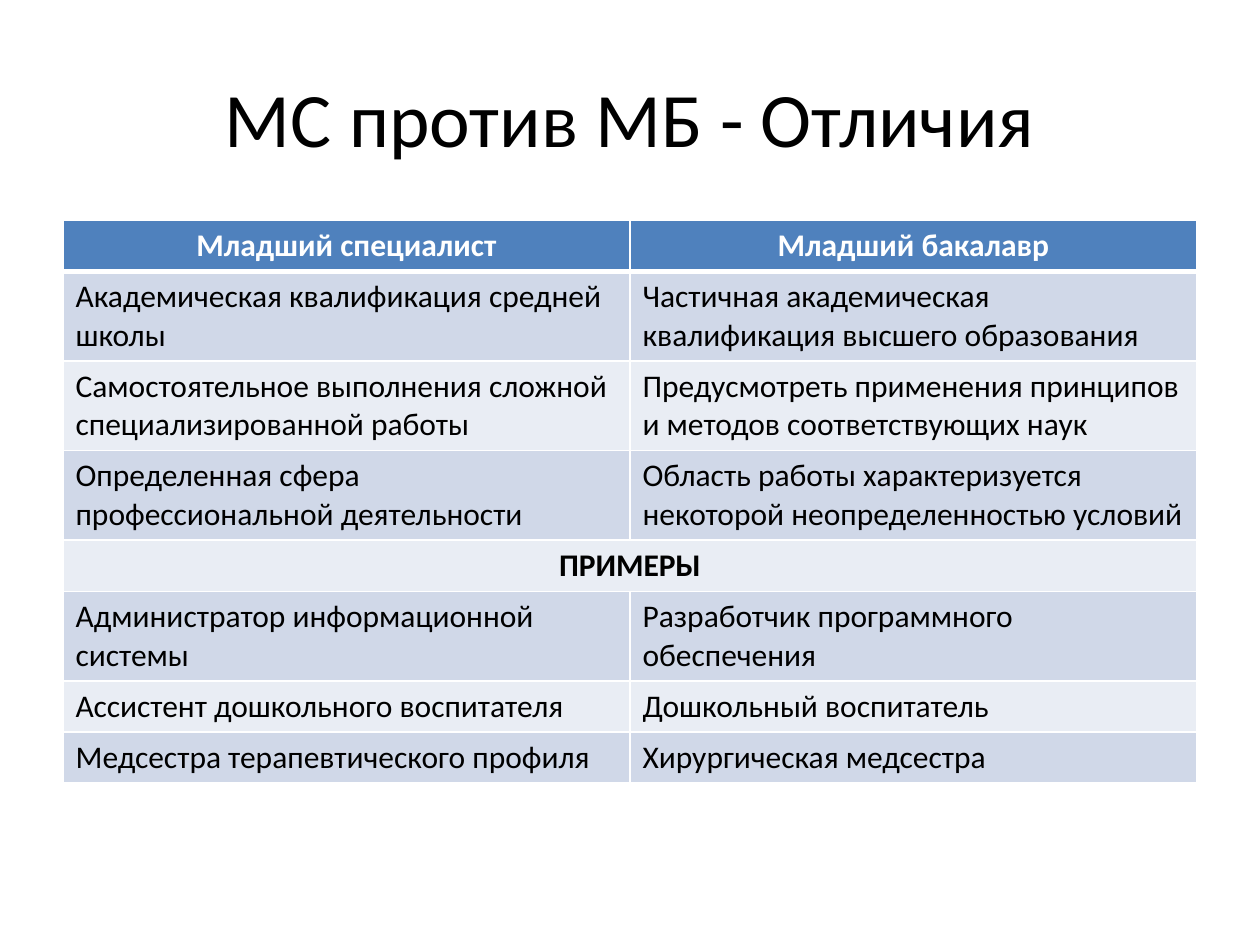
from lxml import etree
from pptx import Presentation
from pptx.dml.color import RGBColor
from pptx.enum.text import MSO_ANCHOR, PP_ALIGN
from pptx.oxml.ns import qn
from pptx.util import Pt

MIDDLE = MSO_ANCHOR.MIDDLE
CENTER, LEFT = PP_ALIGN.CENTER, PP_ALIGN.LEFT
BLACK = RGBColor(0x00, 0x00, 0x00)
WHITE = RGBColor(0xFF, 0xFF, 0xFF)
BLUE = RGBColor(0x4F, 0x81, 0xBD)
DARK = RGBColor(0xD0, 0xD8, 0xE8)
LIGHT = RGBColor(0xE9, 0xED, 0xF4)
FONT = "Calibri"
ROWS = [
    ("Младший специалист", "Младший бакалавр"),
    ("Академическая квалификация средней школы",
     "Частичная академическая квалификация высшего образования"),
    ("Самостоятельное выполнения сложной специализированной работы",
     "Предусмотреть применения принципов и методов соответствующих наук"),
    ("Определенная сфера профессиональной деятельности",
     "Область работы характеризуется некоторой неопределенностью условий"),
    ("ПРИМЕРЫ", ""),
    ("Администратор информационной системы",
     "Разработчик программного обеспечения"),
    ("Ассистент дошкольного воспитателя", "Дошкольный воспитатель"),
    ("Медсестра терапевтического профиля", "Хирургическая медсестра"),
]


def write(para, text, size, color, bold, align):
    para.alignment = align
    run = para.add_run()
    run.text = text
    font = run.font
    font.name, font.size, font.bold = FONT, Pt(size), bold
    font.color.rgb = color


def border(cell, side, width):
    line = etree.SubElement(cell._tc.get_or_add_tcPr(), qn("a:ln" + side), w=str(Pt(width)))
    fill = etree.SubElement(line, qn("a:solidFill"))
    etree.SubElement(fill, qn("a:srgbClr"), val=str(WHITE))


deck = Presentation()
deck.slide_width, deck.slide_height = Pt(720), Pt(540)
slide = deck.slides.add_slide(deck.slide_layouts[5])

title = slide.shapes.title
title.left, title.top, title.width, title.height = Pt(36), Pt(21.6), Pt(648), Pt(90)
title.text_frame.vertical_anchor = MIDDLE
write(title.text_frame.paragraphs[0], "МС против МБ - Отличия", 44, BLACK, False, CENTER)

frame = slide.shapes.add_table(len(ROWS), 2, Pt(36), Pt(126), Pt(648), Pt(29.2 * len(ROWS)))
table = frame.table
for r, row in enumerate(ROWS):
    head = r == 0
    wide = not row[1]
    back = BLUE if head else DARK if r % 2 else LIGHT
    for c, text in enumerate(row):
        cell = table.cell(r, c)
        for side in "LRTB":
            thick = (head and side == "B") or (r == 1 and side == "T")
            border(cell, side, 3 if thick else 1)
        cell.fill.solid()
        cell.fill.fore_color.rgb = back
        if text:
            write(cell.text_frame.paragraphs[0], text, 18, WHITE if head else BLACK,
                  head or wide, CENTER if head or wide else LEFT)
    if wide:
        table.cell(r, 0).merge(table.cell(r, 1))

deck.save("out.pptx")
